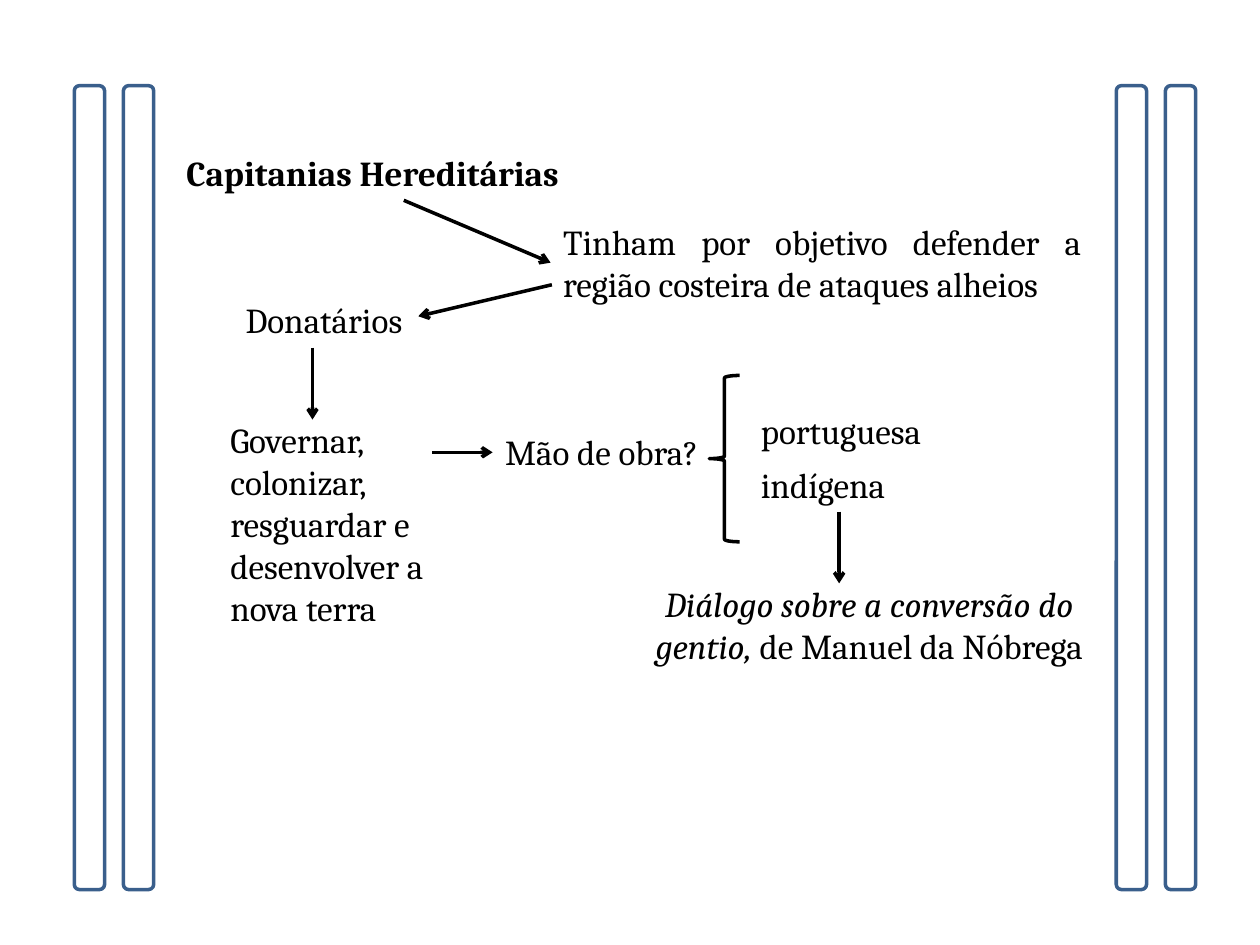
import pptx
import pptx.util
import pptx.dml.color
import pptx.enum.shapes
import pptx.enum.text
import pptx.oxml.ns
import lxml.etree

Inches = pptx.util.Inches
Align = pptx.enum.text.PP_ALIGN
Shape = pptx.enum.shapes.MSO_SHAPE
BLACK = pptx.dml.color.RGBColor(0x00, 0x00, 0x00)
WHITE = pptx.dml.color.RGBColor(0xFF, 0xFF, 0xFF)
BLUE = pptx.dml.color.RGBColor(0x3A, 0x5F, 0x8C)
FONT, FONT_SIZE, LINE_WIDTH = "Cambria", 20, 2
BOTTOM, LEFT = 2, 1

TEXTS = {
    "title": ((1.38, 1.15, 3.65, 0.44), Align.LEFT, [[("Capitanias Hereditárias", "bold")]]),
    "goal": ((4.37, 1.7, 4.31, 0.77), Align.JUSTIFY,
             [[("Tinham por objetivo defender a região costeira de ataques alheios", "")]]),
    "duties": ((1.73, 3.27, 1.82, 1.78), Align.LEFT,
               [[("Governar,", "")], [("colonizar,", "")], [("resguardar e", "")],
                [("desenvolver a nova terra", "")]]),
    "grantees": ((1.85, 2.32, 1.58, 0.44), Align.LEFT, [[("Donatários", "")]]),
    "labour": ((3.91, 3.37, 1.89, 0.44), Align.LEFT, [[("Mão de obra?", "")]]),
    "portuguese": ((5.79, 3.2, 1.77, 0.44), Align.CENTER, [[("portuguesa", "")]]),
    "indigenous": ((5.94, 3.63, 1.54, 0.44), Align.JUSTIFY, [[("indígena", "")]]),
    "dialogue": ((5.02, 4.57, 3.76, 1.11), Align.CENTER,
                 [[("Diálogo sobre a conversão do gentio, ", "italic"),
                   ("de Manuel da Nóbrega", "")]]),
}
ARROWS = [
    ((3.2, 1.59), (4.37, 2.09), "title", "goal"),
    ((4.38, 2.26), (3.32, 2.51), None, None),
    ((2.48, 2.76), (2.48, 3.33), None, None),
    ((3.43, 3.59), (3.91, 3.59), None, "labour"),
    ((6.66, 4.06), (6.66, 4.63), None, None),
]
BRACE = (5.63, 2.98, 0.24, 1.32)
BAR_PAIR_LEFTS = (8.86, 0.59)
BAR_TOP, BAR_WIDTH, BAR_HEIGHT, BAR_STEP = 0.68, 0.24, 6.38, 0.39


def add_text(slide, box, alignment, paragraphs):
    shape = slide.shapes.add_textbox(*map(Inches, box))
    frame = shape.text_frame
    frame.word_wrap = True
    for index, runs in enumerate(paragraphs):
        paragraph = frame.add_paragraph() if index else frame.paragraphs[0]
        paragraph.alignment = alignment
        for text, style in runs:
            run = paragraph.add_run()
            run.text = text
            run.font.name = FONT
            run.font.size = pptx.util.Pt(FONT_SIZE)
            run.font.color.rgb = BLACK
            run.font.bold = style == "bold"
            run.font.italic = style == "italic"
    return shape


def set_line(line, color):
    line.color.rgb = color
    line.width = pptx.util.Pt(LINE_WIDTH)


def add_arrow(slide, start, end, source, target):
    arrow = slide.shapes.add_connector(
        pptx.enum.shapes.MSO_CONNECTOR.STRAIGHT, *map(Inches, start + end))
    if source:
        arrow.begin_connect(source, BOTTOM)
    if target:
        arrow.end_connect(target, LEFT)
    set_line(arrow.line, BLACK)
    qn = pptx.oxml.ns.qn
    properties = arrow.element.spPr
    lxml.etree.SubElement(properties.find(qn("a:ln")), qn("a:tailEnd"), type="arrow")
    lxml.etree.SubElement(properties, qn("a:effectLst"))


def add_outline(slide, kind, box, color, fill=None):
    shape = slide.shapes.add_shape(kind, *map(Inches, box))
    shape.shadow.inherit = False
    if fill is None:
        shape.fill.background()
    else:
        shape.fill.solid()
        shape.fill.fore_color.rgb = fill
    set_line(shape.line, color)


def main():
    presentation = pptx.Presentation()
    presentation.slide_width, presentation.slide_height = Inches(10), Inches(7.5)
    slide = presentation.slides.add_slide(presentation.slide_layouts[6])
    boxes = {name: add_text(slide, *content) for name, content in TEXTS.items()}
    for start, end, source, target in ARROWS:
        add_arrow(slide, start, end, boxes.get(source), boxes.get(target))
    add_outline(slide, Shape.LEFT_BRACE, BRACE, BLACK)
    for pair_left in BAR_PAIR_LEFTS:
        for column in range(2):
            box = (pair_left + column * BAR_STEP, BAR_TOP, BAR_WIDTH, BAR_HEIGHT)
            add_outline(slide, Shape.ROUNDED_RECTANGLE, box, BLUE, WHITE)
    presentation.save("out.pptx")


if __name__ == "__main__":
    main()
